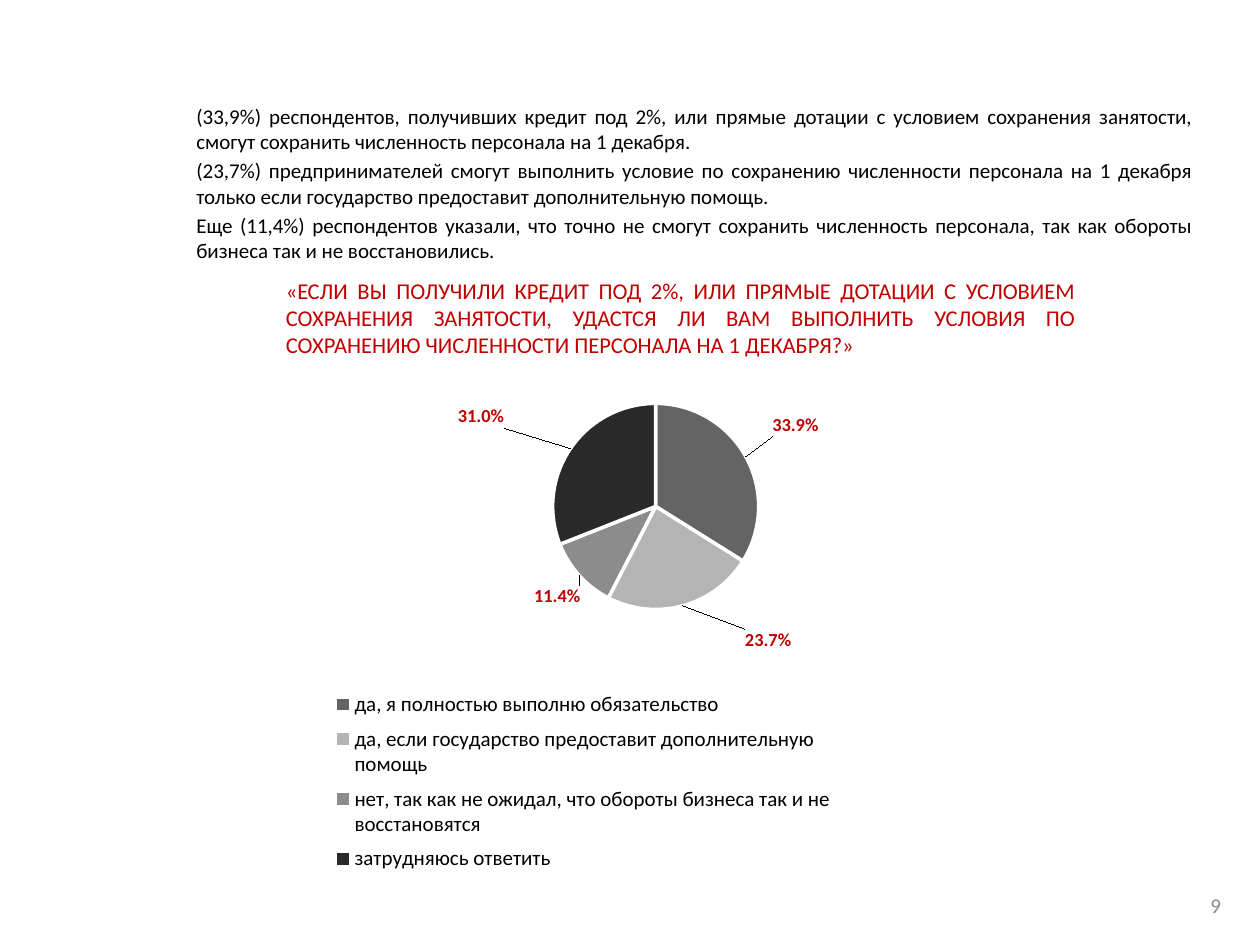
from lxml import etree
from pptx import Presentation
from pptx.chart.data import CategoryChartData
from pptx.dml.color import RGBColor
from pptx.enum.chart import XL_CHART_TYPE, XL_LABEL_POSITION, XL_LEGEND_POSITION
from pptx.enum.text import MSO_ANCHOR, PP_ALIGN
from pptx.oxml import parse_xml
from pptx.oxml.ns import nsdecls, qn
from pptx.util import Inches, Pt

FONT = "Calibri"
BLACK, RED, GREY, WHITE = "000000", "C00000", "8C8C8C", "FFFFFF"

FINDINGS = [
    "(33,9%) респондентов, получивших кредит под 2%, или прямые дотации с условием "
    "сохранения занятости, смогут сохранить численность персонала на 1 декабря.",
    "(23,7%) предпринимателей смогут выполнить условие по сохранению численности "
    "персонала на 1 декабря только если государство предоставит дополнительную помощь.",
    "Еще (11,4%) респондентов указали, что точно не смогут сохранить численность "
    "персонала, так как обороты бизнеса так и не восстановились.",
]
QUESTION = (
    "«ЕСЛИ ВЫ ПОЛУЧИЛИ КРЕДИТ ПОД 2%, ИЛИ ПРЯМЫЕ ДОТАЦИИ С УСЛОВИЕМ СОХРАНЕНИЯ "
    "ЗАНЯТОСТИ, УДАСТСЯ ЛИ ВАМ ВЫПОЛНИТЬ УСЛОВИЯ ПО СОХРАНЕНИЮ ЧИСЛЕННОСТИ "
    "ПЕРСОНАЛА НА 1 ДЕКАБРЯ?»"
)
# Answer, share, slice colour, label shift as a fraction of the chart
ANSWERS = [
    ("да, я полностью выполню обязательство", 0.339, "646464", (0.03, -0.03)),
    ("да, если государство предоставит дополнительную помощь", 0.237, "B4B4B4", (0.09, 0.03)),
    ("нет, так как не ожидал, что обороты бизнеса так и не восстановятся", 0.114, "8C8C8C",
     (0.01, 0.01)),
    ("затрудняюсь ответить", 0.31, "292929", (-0.09, -0.03)),
]


def color(hex_string):
    return RGBColor.from_string(hex_string)


def style_font(font, size, hex_string, bold=False):
    font.name = FONT
    font.size = Pt(size)
    font.bold = bold
    font.color.rgb = color(hex_string)


def add_text(slide, box, paragraphs, size, hex_string, align=PP_ALIGN.JUSTIFY,
             anchor=MSO_ANCHOR.TOP):
    frame = slide.shapes.add_textbox(*map(Inches, box)).text_frame
    frame.word_wrap = True
    frame.vertical_anchor = anchor
    for index, text in enumerate(paragraphs):
        paragraph = frame.paragraphs[0] if index == 0 else frame.add_paragraph()
        paragraph.alignment = align
        paragraph.space_before = Pt(0.2 * size)
        run = paragraph.add_run()
        run.text = text
        style_font(run.font, size, hex_string)


def manual_layout(x, y, width=None, height=None, inner=False):
    """Layout element in fractions of the chart; a label takes only x and y."""
    settings = [("layoutTarget", "inner")] if inner else []
    if width is not None:
        settings += [("xMode", "edge"), ("yMode", "edge")]
    settings += [("x", x), ("y", y)]
    if width is not None:
        settings += [("w", width), ("h", height)]
    body = "".join(f'<c:{tag} val="{value}"/>' for tag, value in settings)
    return parse_xml(f'<c:layout {nsdecls("c")}><c:manualLayout>{body}'
                     "</c:manualLayout></c:layout>")


def set_layout(element, layout, before):
    """Puts the layout in place of an old one, ahead of the first tag found."""
    for old in element.findall(qn("c:layout")):
        element.remove(old)
    next(child for child in element if child.tag in map(qn, before)).addprevious(layout)


def add_labels(plot, series):
    labels = series.data_labels
    labels.show_value = True
    labels.number_format = "0.0%"
    labels.number_format_is_linked = False
    labels.position = XL_LABEL_POSITION.OUTSIDE_END
    style_font(labels.font, 10.5, RED, bold=True)
    element = labels._element
    leader = element.find(qn("c:showLeaderLines"))
    if leader is None:
        leader = etree.SubElement(element, qn("c:showLeaderLines"))
    leader.set("val", "1")
    # Labels moved away from their slices
    for index, (_, _, _, shift) in enumerate(ANSWERS):
        x, y = shift
        label = parse_xml(
            f'<c:dLbl {nsdecls("c")}><c:idx val="{index}"/>'
            '<c:dLblPos val="outEnd"/><c:showLegendKey val="0"/><c:showVal val="1"/>'
            '<c:showCatName val="0"/><c:showSerName val="0"/><c:showPercent val="0"/>'
            '<c:showBubbleSize val="0"/></c:dLbl>')
        set_layout(label, manual_layout(x, y), ["c:dLblPos"])
        element.insert(index, label)


def add_answer_chart(slide, box):
    data = CategoryChartData(number_format="0.0%")
    data.categories = [answer for answer, *_ in ANSWERS]
    data.add_series("Series 1", [share for _, share, *_ in ANSWERS])
    chart = slide.shapes.add_chart(XL_CHART_TYPE.PIE, *map(Inches, box), data).chart
    chart.has_title = False
    style_font(chart.font, 10, BLACK)
    plot = chart.plots[0]
    plot.vary_by_categories = True
    series = plot.series[0]
    # Slices
    for index, (_, _, fill, _) in enumerate(ANSWERS):
        point_format = series.points[index].format
        point_format.fill.solid()
        point_format.fill.fore_color.rgb = color(fill)
        point_format.line.color.rgb = color(WHITE)
        point_format.line.width = Pt(2)
    add_labels(plot, series)
    # Legend below the pie
    chart.has_legend = True
    chart.legend.position = XL_LEGEND_POSITION.RIGHT
    chart.legend.include_in_layout = False
    style_font(chart.legend.font, 12, BLACK)
    set_layout(chart.legend._element, manual_layout(0.03, 0.57, 0.8, 0.37), ["c:overlay"])
    plot_area = chart._chartSpace.chart.plotArea
    set_layout(plot_area, manual_layout(0.185, 0.052, 0.705, 0.383, inner=True),
               ["c:pieChart"])


def main():
    presentation = Presentation()
    presentation.slide_width = Inches(10)
    presentation.slide_height = Inches(7.5)
    slide = presentation.slides.add_slide(presentation.slide_layouts[6])
    # Page number
    add_text(slide, (7.46, 6.98, 2.33, 0.4), ["9"], 12, GREY, PP_ALIGN.RIGHT,
             MSO_ANCHOR.MIDDLE)
    # Survey question and findings
    add_text(slide, (2.17, 2.15, 6.46, 0.64), [QUESTION], 12.9, RED)
    add_text(slide, (1.46, 0.77, 8.11, 0.88), FINDINGS, 12, BLACK)
    add_answer_chart(slide, (2.35, 2.98, 5.31, 4.27))
    presentation.save("out.pptx")


if __name__ == "__main__":
    main()
